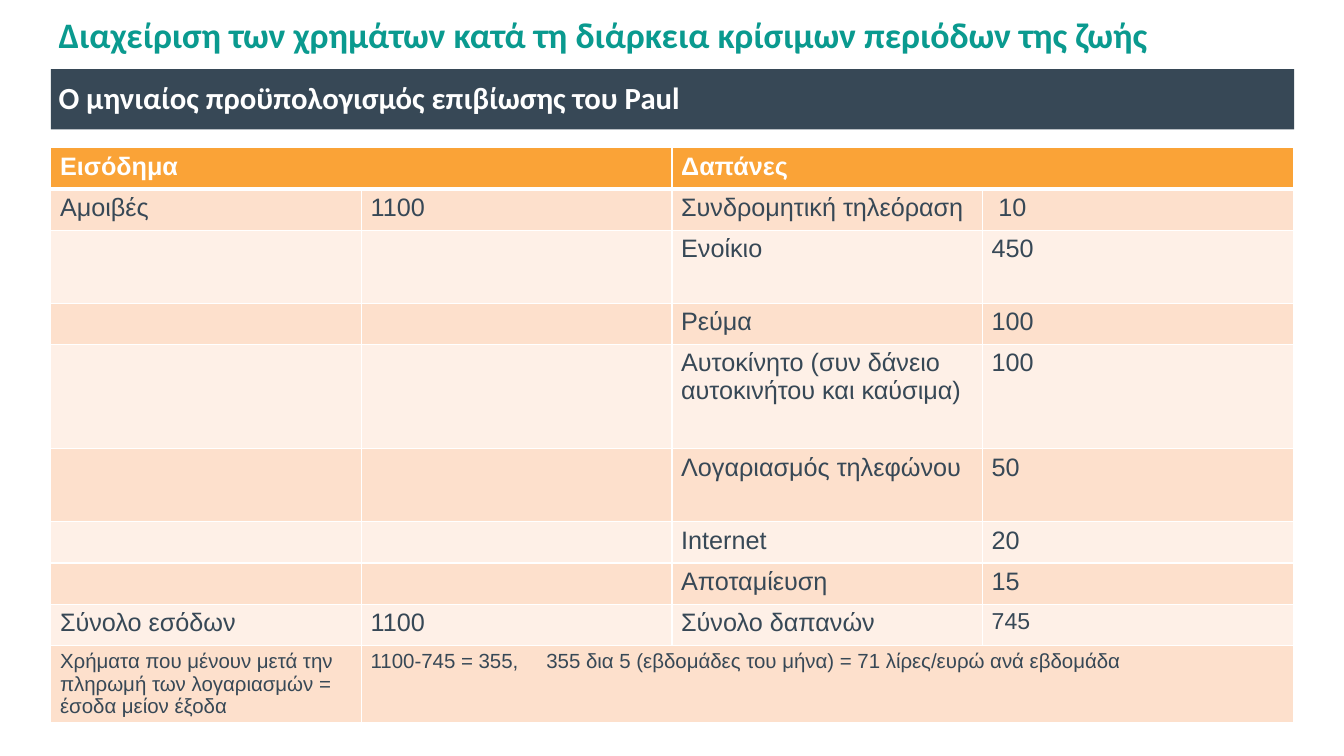
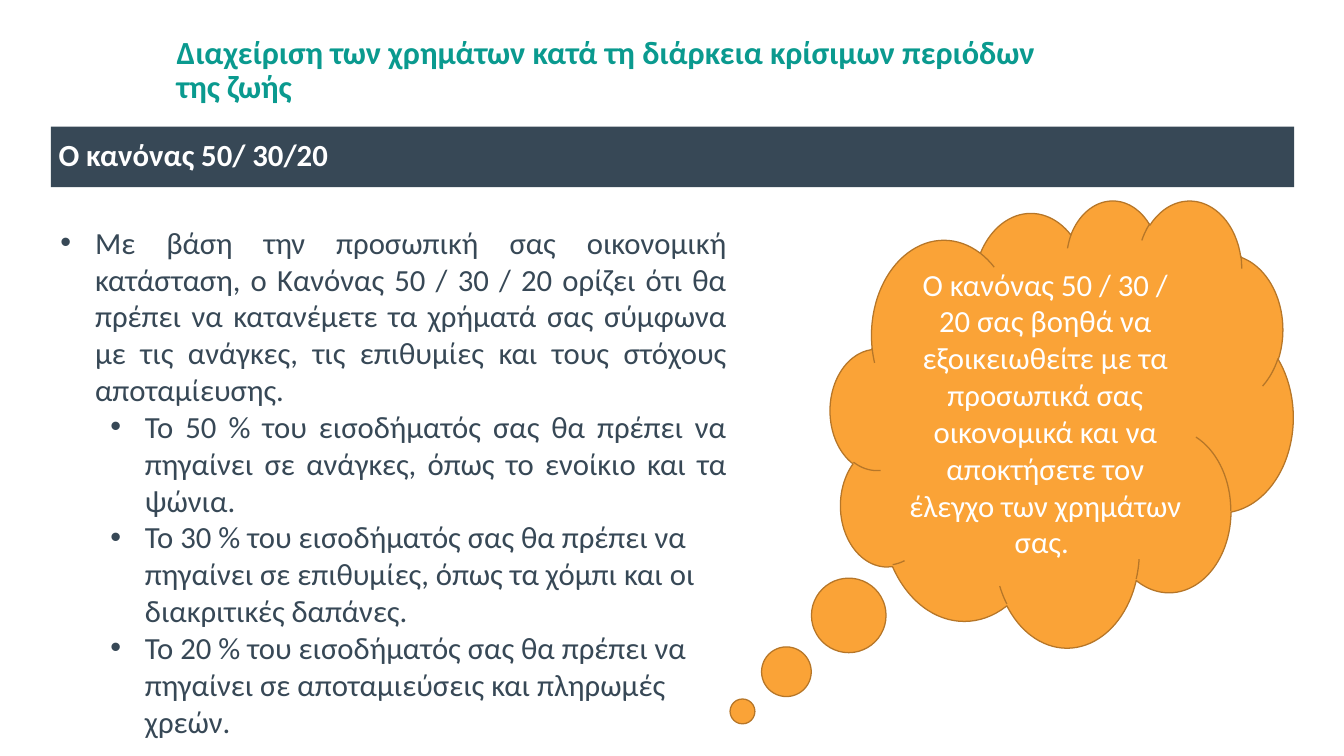
from lxml import etree
from pptx import Presentation
from pptx import util as u
from pptx.dml.color import RGBColor
from pptx.enum import shapes, text
from pptx.oxml import ns

PX = 9525
INK = dict(teal="0A9A8F", navy="374856", white="FFFFFF", gold="FAA337",
           rust="B67628", peach="FDE0CC", cream="FEF0E7")
HEAD = "Διαχείριση των χρημάτων κατά τη διάρκεια κρίσιμων περιόδων της ζωής"
ROWS = [
    (43, "Εισόδημα", "", "Δαπάνες", ""),
    (43, "Αμοιβές", "1100", "Συνδρομητική τηλεόραση", "10"),
    (76, "", "", "Ενοίκιο", "450"),
    (43, "", "", "Ρεύμα", "100"),
    (109, "", "", "Αυτοκίνητο (συν δάνειο αυτοκινήτου και καύσιμα)", "100"),
    (76, "", "", "Λογαριασμός τηλεφώνου", "50"),
    (43, "", "", "Internet", "20"),
    (43, "", "", "Αποταμίευση", "15"),
    (43, "Σύνολο εσόδων", "1100", "Σύνολο δαπανών", "745"),
    (80, "Χρήματα που μένουν μετά την πληρωμή των λογαριασμών = έσοδα μείον έξοδα",
     "1100-745 = 355,\t355 δια 5 (εβδομάδες του μήνα) = 71 λίρες/ευρώ ανά εβδομάδα", "", ""),
]
RULE = [
    (0, True, "Με βάση την προσωπική σας οικονομική κατάσταση, ο Κανόνας 50 / 30 / 20 "
     "ορίζει ότι θα πρέπει να κατανέμετε τα χρήματά σας σύμφωνα με τις ανάγκες, "
     "τις επιθυμίες και τους στόχους αποταμίευσης."),
    (1, True, "Το 50 % του εισοδήματός σας θα πρέπει να πηγαίνει σε ανάγκες, "
     "όπως το ενοίκιο και τα ψώνια."),
    (1, False, "Το 30 % του εισοδήματός σας θα πρέπει να πηγαίνει σε επιθυμίες, "
     "όπως τα χόμπι και οι διακριτικές δαπάνες."),
    (1, False, "Το 20 % του εισοδήματός σας θα πρέπει να πηγαίνει σε αποταμιεύσεις "
     "και πληρωμές χρεών."),
]
CLOUD = ("Ο κανόνας 50 / 30 / 20 σας βοηθά να εξοικειωθείτε με τα προσωπικά σας "
         "οικονομικά και να αποκτήσετε τον έλεγχο των χρημάτων σας. ")


class Deck:
    """Holds the style, the file and the current slide."""

    def __init__(self, wide, high):
        self.file = Presentation()
        self.file.slide_width, self.file.slide_height = wide * PX, high * PX

    def rgb(self, ink):
        return RGBColor.from_string(INK[ink])

    def paint(self, item, ink):
        item.fill.solid()
        item.fill.fore_color.rgb = self.rgb(ink)

    def style(self, para, size, ink, bold=False, font="Calibri", align=None, lead=None):
        para.font.name, para.font.size, para.font.bold = font, u.Pt(size), bold
        para.font.color.rgb = self.rgb(ink)
        para.alignment, para.line_spacing = align, lead

    def fit(self, frame, side):
        frame.word_wrap = True
        frame.auto_size = text.MSO_AUTO_SIZE.NONE
        frame.vertical_anchor = text.MSO_ANCHOR.MIDDLE
        frame.margin_left = frame.margin_right = side * PX
        frame.margin_top = frame.margin_bottom = 5 * PX

    def page(self, box, size):
        self.slide = self.file.slides.add_slide(self.file.slide_layouts[5])
        head = self.slide.shapes.title
        head.left, head.top, head.width, head.height = (n * PX for n in box)
        self.fit(head.text_frame, 8)
        head.text_frame.text = HEAD
        self.style(head.text_frame.paragraphs[0], size, "teal", True,
                   align=text.PP_ALIGN.LEFT, lead=0.9)

    def shape(self, kind, box, ink, words, side, **look):
        item = self.slide.shapes.add_shape(kind, *(n * PX for n in box))
        item.shadow.inherit = False
        self.paint(item, ink)
        item.line.fill.background()
        self.fit(item.text_frame, side)
        item.text_frame.text = words
        self.style(item.text_frame.paragraphs[0], 24, "white", **look)
        return item

    def band(self, top, words):
        self.shape(shapes.MSO_SHAPE.RECTANGLE, (53, top, 1295, 63), "navy", words, 8,
                   bold=True, align=text.PP_ALIGN.JUSTIFY, lead=0.9)

    def cloud(self, box, words):
        item = self.shape(shapes.MSO_SHAPE.CLOUD_CALLOUT, box, "gold", words, 10,
                          align=text.PP_ALIGN.CENTER)
        item.adjustments[0], item.adjustments[1] = -0.69, 0.645
        item.line.color.rgb = self.rgb("rust")
        item.line.width = u.Pt(1)

    def list(self, box, items):
        frame = self.slide.shapes.add_textbox(*(n * PX for n in box)).text_frame
        self.fit(frame, 10)
        frame.vertical_anchor = text.MSO_ANCHOR.TOP
        for i, (level, even, words) in enumerate(items):
            para = frame.paragraphs[0] if i == 0 else frame.add_paragraph()
            para.text, para.level = words, level
            props = para._p.get_or_add_pPr()
            props.set("marL", str((36 + 52 * level) * PX))
            props.set("indent", str(-36 * PX))
            etree.SubElement(props, ns.qn("a:buFont"), typeface="Arial")
            etree.SubElement(props, ns.qn("a:buChar"), char="•")
            self.style(para, 24, "navy",
                       align=text.PP_ALIGN.JUSTIFY if even else text.PP_ALIGN.LEFT)

    def edge(self, cell, low):
        props = cell._tc.get_or_add_tcPr()
        for side, wide in zip("LRTB", (1, 1, 1, low)):
            line = etree.SubElement(props, ns.qn("a:ln" + side), w=str(u.Pt(wide)))
            fill = etree.SubElement(line, ns.qn("a:solidFill"))
            etree.SubElement(fill, ns.qn("a:srgbClr"), val=INK["white"])

    def table(self, box, rows, spans):
        grid = self.slide.shapes.add_table(len(rows), 4, *(n * PX for n in box)).table
        grid.horz_banding = False
        for r, (high, *words) in enumerate(rows):
            grid.rows[r].height = high * PX
            for c, word in enumerate(words):
                cell = grid.cell(r, c)
                self.edge(cell, 1 if r else 3)
                self.paint(cell, ("cream", "peach")[r % 2] if r else "gold")
                cell.text = word
                size = 16 if r == 9 else 18 if word == "745" else 19.7
                self.style(cell.text_frame.paragraphs[0], size,
                           "navy" if r else "white", r == 0, "Arial")
        for r, c, last in spans:
            grid.cell(r, c).merge(grid.cell(r, last))
        return grid

    def inset(self, cell, left):
        cell.text_frame.paragraphs[0]._p.get_or_add_pPr().set("marL", str(left * PX))

    def tab(self, cell, at):
        props = cell.text_frame.paragraphs[0]._p.get_or_add_pPr()
        stops = etree.Element(ns.qn("a:tabLst"))
        etree.SubElement(stops, ns.qn("a:tab"), pos=str(at * PX), algn="l")
        props.insert(0, stops)


def main():
    deck = Deck(1400, 788)
    deck.page((53, 0, 1294, 76), 28)
    deck.band(72, "Ο μηνιαίος προϋπολογισμός επιβίωσης του Paul ")
    grid = deck.table((53, 154, 1294, 599), ROWS, [(0, 0, 1), (0, 2, 3), (9, 1, 3)])
    deck.inset(grid.cell(1, 3), 7)
    deck.tab(grid.cell(9, 1), 183)

    deck.page((176, 36, 958, 76), 25.2)
    deck.band(132, "Ο κανόνας 50/ 30/20 ")
    deck.list((53, 228, 714, 557), RULE)
    deck.cloud((865, 208, 482, 466), CLOUD)
    deck.file.save("out.pptx")


if __name__ == "__main__":
    main()
